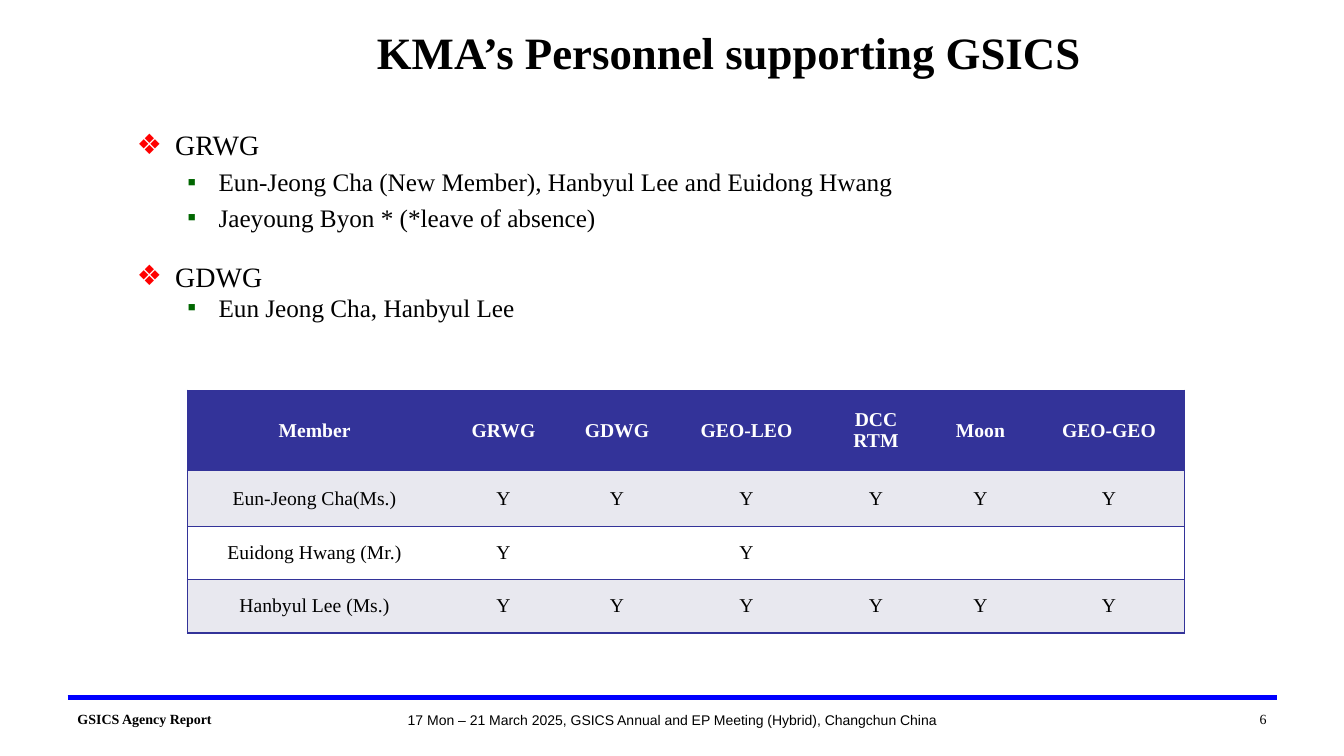
"""Build the personnel slide with its member table."""
from dataclasses import dataclass

from lxml.etree import SubElement as Sub
from pptx import Presentation
from pptx.dml.color import RGBColor as RGB
from pptx.enum.shapes import MSO_CONNECTOR as Link
from pptx.enum.text import MSO_ANCHOR as Anchor, PP_ALIGN as Align
from pptx.oxml.ns import qn
from pptx.util import Pt

UNIT = 9144


@dataclass(frozen=True)
class Theme:
    serif: str = "Times New Roman"
    sans: str = "Arial"
    ink: str = "000000"
    paper: str = "FFFFFF"
    navy: str = "333399"
    band: str = "E8E8EF"
    rule: str = "0000FF"
    red: str = "FF0000"
    green: str = "006600"
    title: int = 32
    head: int = 20
    item: int = 18
    cell: int = 14
    foot: int = 10


LOOK = Theme()
LEVELS = (
    ("❖", LOOK.red, LOOK.head, 38, 38),
    ("▪", LOOK.green, LOOK.item, 81, 31),
)
POINTS = (
    (0, "GRWG", 0, 1),
    (1, "Eun-Jeong Cha (New Member), Hanbyul Lee and Euidong Hwang", 3.6, 1),
    (1, "Jaeyoung Byon * (*leave of absence)", 3.6, 1),
    (0, "GDWG", 24, 0.8),
    (1, "Eun Jeong Cha, Hanbyul Lee", 3.6, 0.8),
)
COLS = (252, 123, 102, 155, 102, 105, 150)
ROWS = (80, 55, 53, 53)
FILLS = (LOOK.navy, LOOK.band, LOOK.paper, LOOK.band)
MEMBERS = (
    ("Member", "GRWG", "GDWG", "GEO-LEO", "DCC\nRTM", "Moon", "GEO-GEO"),
    ("Eun-Jeong Cha(Ms.)",) + ("Y",) * 6,
    ("Euidong Hwang (Mr.)", "Y", "", "Y", "", "", ""),
    ("Hanbyul Lee (Ms.)",) + ("Y",) * 6,
)


def px(*sizes):
    """Turn px lengths into EMU."""
    return [size * UNIT for size in sizes]


def style(para, size, color=LOOK.ink, bold=False, face=LOOK.serif):
    """Format every run of a paragraph."""
    for run in para.runs:
        font = run.font
        font.name, font.size, font.bold = face, Pt(size), bold
        font.color.rgb = RGB.from_string(color)


def add_text(slide, area, text, size, align=Align.LEFT, anchor=Anchor.TOP, **kind):
    """Add a one-line text box."""
    frame = slide.shapes.add_textbox(*px(*area)).text_frame
    frame.word_wrap = True
    frame.vertical_anchor = anchor
    frame.text = text
    para = frame.paragraphs[0]
    para.alignment = align
    style(para, size, **kind)


def add_mark(para, mark, color, left, hang):
    """Give a paragraph a coloured bullet and a hanging indent."""
    props = para._p.get_or_add_pPr()
    left, hang = px(left, hang)
    props.set("marL", str(left))
    props.set("indent", str(-hang))
    Sub(Sub(props, qn("a:buClr")), qn("a:srgbClr"), val=color)
    Sub(props, qn("a:buFont"), typeface=LOOK.sans)
    Sub(props, qn("a:buChar"), char=mark)


def add_list(slide, area, points):
    """Add the two-level bullet list."""
    frame = slide.shapes.add_textbox(*px(*area)).text_frame
    frame.word_wrap = True
    for index, (level, text, gap, pitch) in enumerate(points):
        para = frame.add_paragraph() if index else frame.paragraphs[0]
        mark, color, size, left, hang = LEVELS[level]
        para.text = text
        para.level = level
        add_mark(para, mark, color, left, hang)
        para.space_before = Pt(gap)
        para.line_spacing = pitch
        style(para, size)


def add_edge(cell, sides):
    """Draw the named cell borders and clear the others."""
    props = cell._tc.get_or_add_tcPr()
    for index, side in enumerate("LRTB"):
        line = Sub(props, qn(f"a:ln{side}"), w=str(Pt(1)))
        if side in sides:
            Sub(Sub(line, qn("a:solidFill")), qn("a:srgbClr"), val=LOOK.navy)
        else:
            Sub(line, qn("a:noFill"))
        props.insert(index, line)


def fill_cell(cell, text, fill, head):
    """Set the text, fill and margins of a cell."""
    cell.text = text
    cell.fill.solid()
    cell.fill.fore_color.rgb = RGB.from_string(fill)
    cell.vertical_anchor = Anchor.MIDDLE
    cell.margin_left, cell.margin_right = px(5, 5)
    cell.margin_top, cell.margin_bottom = px(4, 4)
    for para in cell.text_frame.paragraphs:
        para.alignment = Align.CENTER
        style(para, LOOK.cell, LOOK.paper if head else LOOK.ink, head)


def add_grid(slide, left, top):
    """Add the member table."""
    area = px(left, top, sum(COLS), sum(ROWS))
    grid = slide.shapes.add_table(len(ROWS), len(COLS), *area).table
    grid.first_row = grid.horz_banding = False
    for col, width in zip(grid.columns, px(*COLS)):
        col.width = width
    for row, height in zip(grid.rows, px(*ROWS)):
        row.height = height
    ends = {0: "L", len(COLS) - 1: "R"}
    for r, (names, fill) in enumerate(zip(MEMBERS, FILLS)):
        for c, text in enumerate(names):
            cell = grid.cell(r, c)
            fill_cell(cell, text, fill, r == 0)
            add_edge(cell, "TB" + ends.get(c, ""))


def add_rule(slide, left, right, top):
    """Add the line above the footer."""
    rule = slide.shapes.add_connector(Link.STRAIGHT, *px(left, top, right, top))
    rule.line.color.rgb = RGB.from_string(LOOK.rule)
    rule.line.width = Pt(3)
    Sub(rule._element.spPr, qn("a:effectLst"))


def main():
    """Build and save the slide."""
    deck = Presentation()
    deck.slide_width, deck.slide_height = px(1333, 750)
    slide = deck.slides.add_slide(deck.slide_layouts[6])
    add_text(slide, (366, 701, 601, 25),
             "17 Mon – 21 March 2025, GSICS Annual and EP Meeting (Hybrid), Changchun China",
             LOOK.foot, Align.CENTER, face=LOOK.sans)
    add_rule(slide, 67, 1267, 692)
    add_text(slide, (67, 700, 301, 25), "GSICS Agency Report", LOOK.foot, bold=True)
    add_text(slide, (1067, 700, 199, 25), "6", LOOK.foot, Align.RIGHT)
    add_grid(slide, 186, 387)
    add_text(slide, (229, 15, 988, 73), "KMA’s Personnel supporting GSICS",
             LOOK.title, Align.CENTER, Anchor.MIDDLE, bold=True)
    add_list(slide, (126, 122, 1066, 234), POINTS)
    deck.save("out.pptx")


if __name__ == "__main__":
    main()
